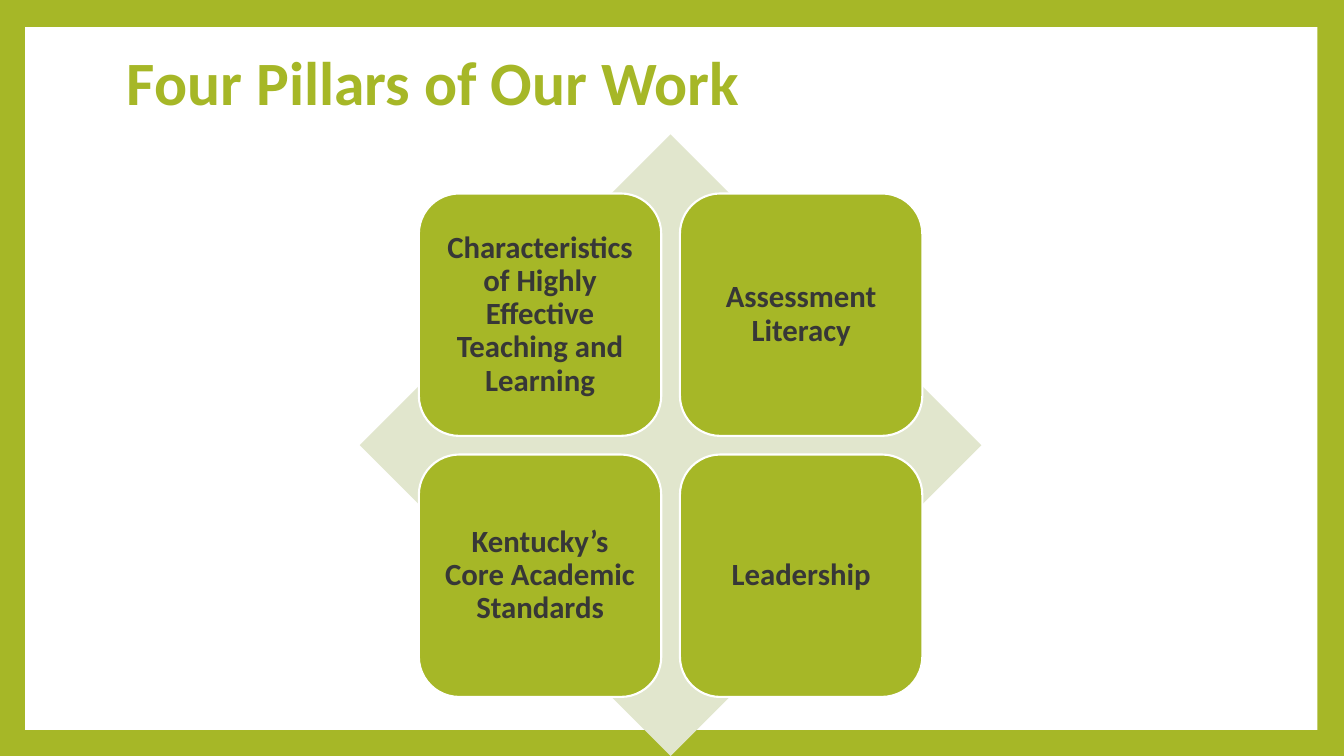
from pptx import Presentation
from pptx.dml.color import RGBColor
from pptx.enum.shapes import MSO_SHAPE as Preset
from pptx.enum.text import MSO_ANCHOR as Anchor, PP_ALIGN as Align
from pptx.util import Pt

GREEN = RGBColor(0xA6, 0xB7, 0x27)
PALE_GREEN = RGBColor(0xE1, 0xE6, 0xCD)
WHITE = RGBColor(0xFF, 0xFF, 0xFF)
CHARCOAL = RGBColor(0x37, 0x37, 0x37)

PILLARS = [
    "Characteristics of Highly Effective Teaching and Learning",
    "Assessment Literacy",
    "Kentucky’s Core Academic Standards",
    "Leadership",
]
TITLE_FONT = {"name": "Calibri", "size": Pt(44), "bold": True}
PILLAR_FONT = {"name": "Calibri", "size": Pt(22), "bold": True}


def set_attributes(target, values):
    """Set each named value on the target."""
    for name, value in values.items():
        setattr(target, name, value)


def write_text(shape, text, font, color, align, inset):
    """Put one formatted, vertically centred paragraph in a shape."""
    frame = shape.text_frame
    frame.text = text
    margins = {f"margin_{side}": Pt(inset) for side in ("left", "top", "right", "bottom")}
    set_attributes(frame, {"word_wrap": True, "vertical_anchor": Anchor.MIDDLE, **margins})
    paragraph = frame.paragraphs[0]
    set_attributes(paragraph, {"alignment": align, "line_spacing": 0.9})
    run_font = paragraph.runs[0].font
    set_attributes(run_font, font)
    run_font.color.rgb = color


def add_block(slide, preset, box, fill, line=None):
    """Add a flat preset shape in the given box."""
    shape = slide.shapes.add_shape(preset, *map(Pt, box))
    shape.shadow.inherit = False
    shape.fill.solid()
    shape.fill.fore_color.rgb = fill
    if line is None:
        shape.line.fill.background()
    else:
        shape.line.color.rgb = line
        shape.line.width = Pt(1.5)
    return shape


def add_frame(slide, box):
    """Colour the background and lay a white panel behind the title."""
    slide.background.fill.solid()
    slide.background.fill.fore_color.rgb = GREEN
    panel = add_block(slide, Preset.RECTANGLE, box, WHITE)
    slide.shapes.title.element.addprevious(panel.element)


def add_title(slide, box, text):
    """Place and format the title placeholder."""
    title = slide.shapes.title
    set_attributes(title, dict(zip(("left", "top", "width", "height"), map(Pt, box))))
    write_text(title, text, TITLE_FONT, GREEN, Align.LEFT, 7.2)


def add_pillar_matrix(slide, box, pillars):
    """Set four rounded tiles, two by two, over a diamond."""
    left, top, side, _ = box
    add_block(slide, Preset.DIAMOND, box, PALE_GREEN)
    margin, tile, pitch = side * 0.095, side * 0.39, side * 0.42
    for index, text in enumerate(pillars):
        row, column = divmod(index, 2)
        tile_box = (left + margin + column * pitch, top + margin + row * pitch, tile, tile)
        shape = add_block(slide, Preset.ROUNDED_RECTANGLE, tile_box, GREEN, WHITE)
        write_text(shape, text, PILLAR_FONT, CHARCOAL, Align.CENTER, 6.6)


def main():
    """Build and save the presentation."""
    presentation = Presentation()
    set_attributes(presentation, {"slide_width": Pt(960), "slide_height": Pt(540)})
    slide = presentation.slides.add_slide(presentation.slide_layouts[5])
    add_frame(slide, (18, 19.4, 923, 502))
    add_title(slide, (83.5, 23.8, 792, 74), "Four Pillars of Our Work")
    add_pillar_matrix(slide, (257, 96, 444, 444), PILLARS)
    presentation.save("out.pptx")


if __name__ == "__main__":
    main()
